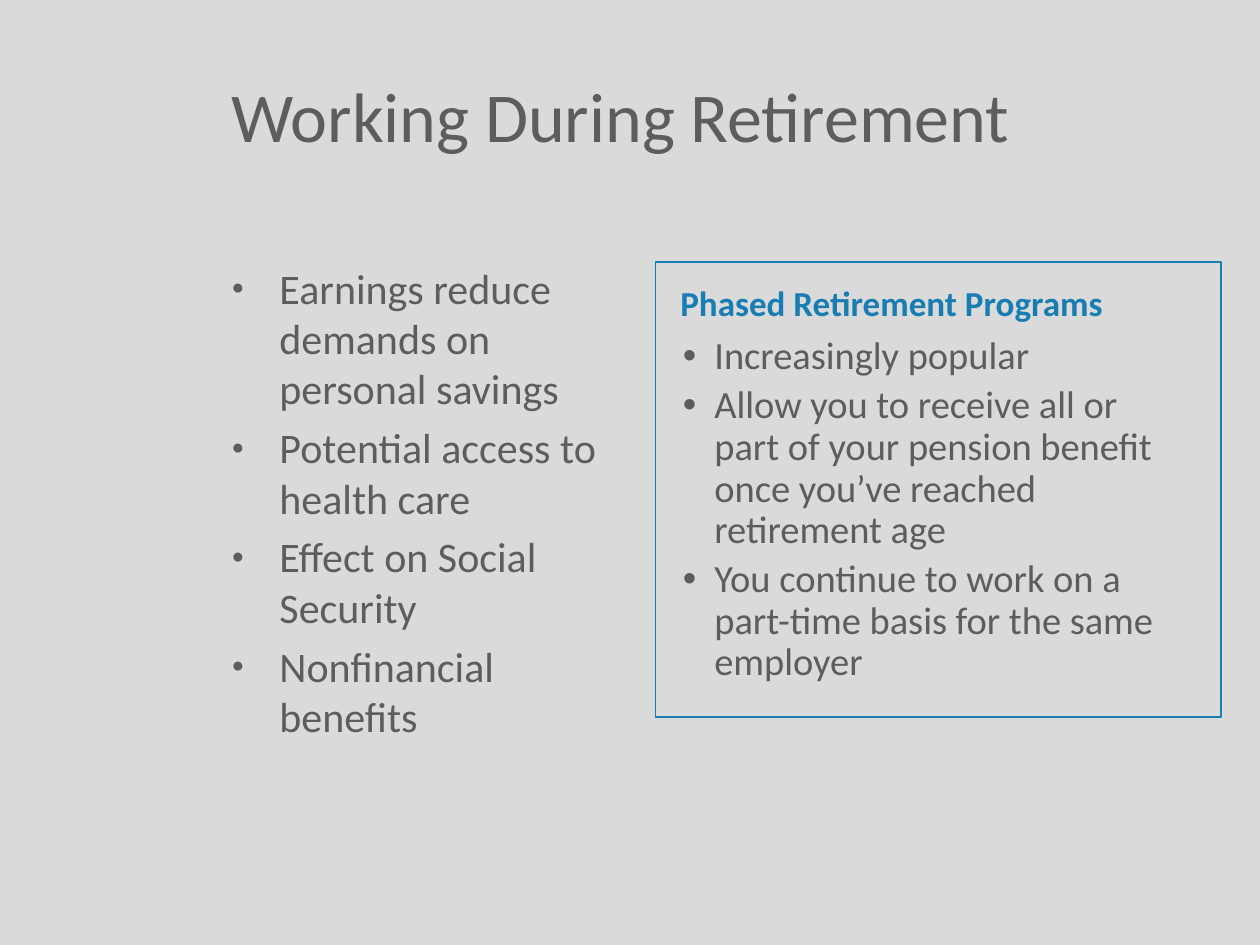
from lxml.etree import SubElement
from pptx import Presentation
from pptx.dml.color import RGBColor
from pptx.enum.shapes import MSO_SHAPE as Shape
from pptx.enum.text import MSO_ANCHOR as Anchor
from pptx.oxml.ns import qn
from pptx.util import Inches, Pt

BACKGROUND = RGBColor(0xDA, 0xDA, 0xDA)
GREY = RGBColor(0x5D, 0x5D, 0x5D)
BLUE = RGBColor(0x17, 0x7D, 0xB3)

EARNINGS_POINTS = [
    "Earnings reduce demands on personal savings",
    "Potential access to health care",
    "Effect on Social Security",
    "Nonfinancial benefits",
]
PHASED_POINTS = [
    "Increasingly popular",
    "Allow you to receive all or part of your pension benefit once you’ve reached retirement age",
    "You continue to work on a part-time basis for the same employer",
]


def set_all(target, values):
    """Set each attribute of the target from a dict."""
    for attribute, value in values.items():
        setattr(target, attribute, value)


def add_bullet(paragraph, char, percent, indent):
    """Give the paragraph a grey hanging bullet."""
    properties = paragraph._p.get_or_add_pPr()
    properties.set("marL", str(Inches(indent)))
    properties.set("indent", str(-Inches(indent)))
    color = SubElement(properties, qn("a:buClr"))
    SubElement(color, qn("a:srgbClr"), val=str(GREY))
    SubElement(properties, qn("a:buSzPct"), val=str(percent * 1000))
    SubElement(properties, qn("a:buFont"), typeface="Arial")
    SubElement(properties, qn("a:buChar"), char=char)


def add_text(slide, box, lines, size, color=GREY, bold=False, anchor=Anchor.TOP,
             insets=(0.1, 0.05, 0.1, 0.05), bullet=None, spacing=None, gap=0):
    """Place a text box with one paragraph per line."""
    frame = slide.shapes.add_textbox(*map(Inches, box)).text_frame
    sides = ("margin_left", "margin_top", "margin_right", "margin_bottom")
    set_all(frame, dict(zip(sides, map(Inches, insets))))
    set_all(frame, {"word_wrap": True, "vertical_anchor": anchor})
    for index, line in enumerate(lines):
        paragraph = frame.add_paragraph() if index else frame.paragraphs[0]
        if bullet:
            add_bullet(paragraph, *bullet)
        if spacing:
            paragraph.line_spacing = spacing
        if index:
            paragraph.space_before = Pt(gap)
        run = paragraph.add_run()
        run.text = line
        set_all(run.font, {"name": "Calibri", "size": Pt(size), "bold": bold})
        run.font.color.rgb = color


def add_title(slide, box):
    """Place the slide title."""
    add_text(slide, box, ["Working During Retirement"], 40, anchor=Anchor.MIDDLE)


def add_earnings_list(slide, box):
    """Place the list of reasons to keep working."""
    add_text(slide, box, EARNINGS_POINTS, 24, insets=(0.1, 0.08, 0.1, 0.05),
             bullet=("●", 50, 0.38), gap=4.8)


def add_phased_panel(slide, box):
    """Place the outlined panel on phased retirement."""
    left, top, width, height = box
    add_text(slide, (left + 0.12, top + 0.04, 4.1, 0.61), ["Phased Retirement Programs"],
             20, BLUE, True, Anchor.MIDDLE, (0.08,) * 4, spacing=0.9)
    add_text(slide, (left + 0.09, top + 0.56, 4.17, 4.27), PHASED_POINTS, 22,
             insets=(0.13, 0.03, 0.17, 0.03), bullet=("•", 100, 0.25),
             spacing=0.9, gap=4.4)
    outline = slide.shapes.add_shape(Shape.RECTANGLE, *map(Inches, box))
    outline.shadow.inherit = False
    outline.fill.background()
    outline.line.color.rgb = BLUE
    outline.line.width = Pt(0.75)


def main():
    """Build and save the slide."""
    deck = Presentation()
    set_all(deck, {"slide_width": Inches(10), "slide_height": Inches(7.5)})
    slide = deck.slides.add_slide(deck.slide_layouts[6])
    slide.background.fill.solid()
    slide.background.fill.fore_color.rgb = BACKGROUND
    add_title(slide, (1.74, 0.58, 8.84, 0.66))
    add_earnings_list(slide, (1.74, 2, 3.26, 4.95))
    add_phased_panel(slide, (5.2, 2.08, 4.49, 3.61))
    deck.save("out.pptx")


if __name__ == "__main__":
    main()
